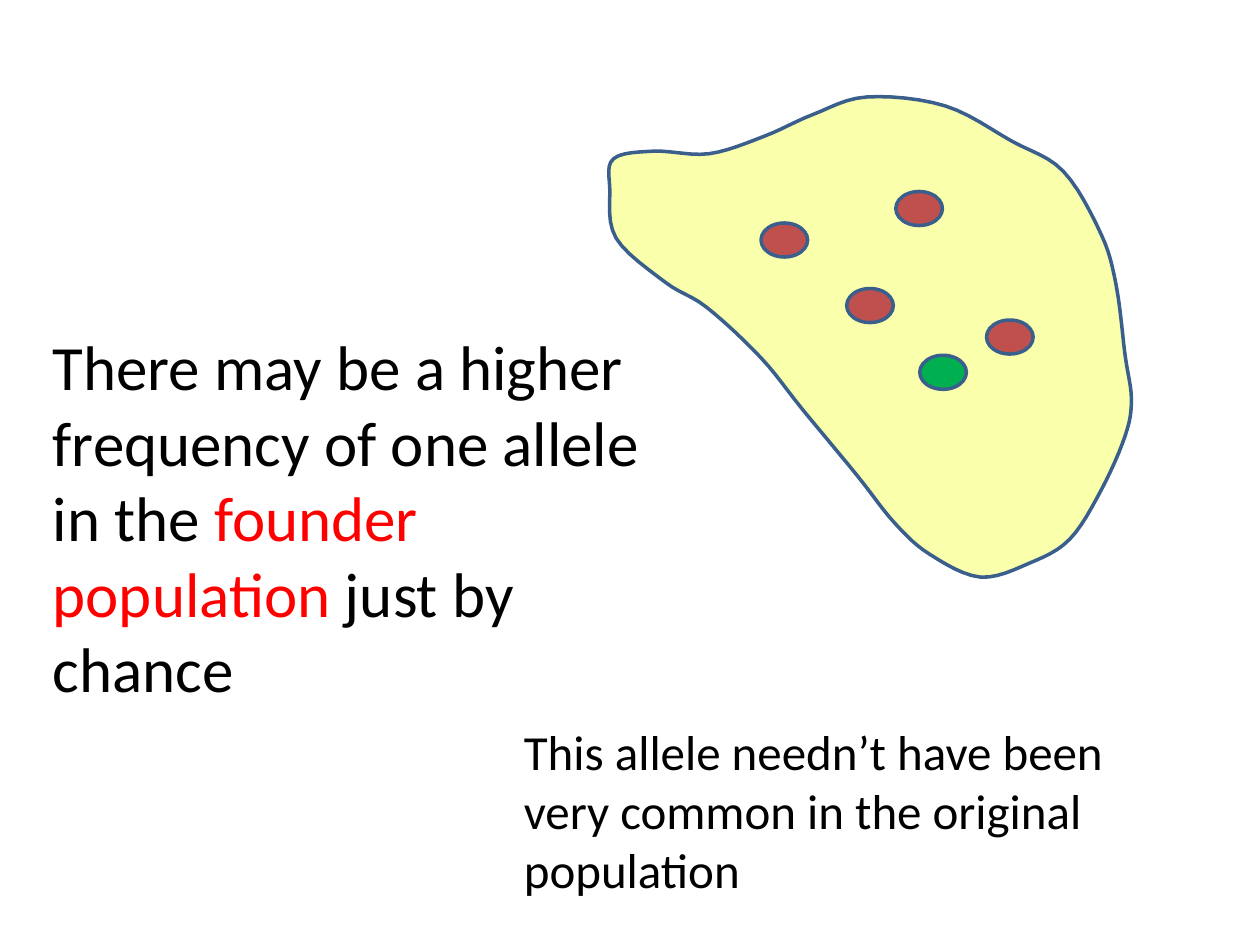
from pptx import Presentation
from pptx.dml.color import RGBColor
from pptx.enum.shapes import MSO_SHAPE
from pptx.enum.text import MSO_AUTO_SIZE
from pptx.util import Inches, Pt

OVAL = MSO_SHAPE.OVAL
FIT_SHAPE = MSO_AUTO_SIZE.SHAPE_TO_FIT_TEXT
BLACK, RED = "000000", "FF0000"
ISLAND_FILL, OUTLINE = "F9FFAB", "3A5F8C"
COMMON_ALLELE, RARE_ALLELE = "C0504D", "00B050"
FOUNDER_WIDTH, FOUNDER_HEIGHT = 0.37, 0.27
STEPS_PER_BEND = 6


def paint(shape, fill):
    shape.shadow.inherit = False
    shape.fill.solid()
    shape.fill.fore_color.rgb = RGBColor.from_string(fill)
    shape.line.color.rgb = RGBColor.from_string(OUTLINE)
    shape.line.width = Pt(2)


def add_text(page, left, top, width, height, size, pieces):
    box = page.shapes.add_textbox(Inches(left), Inches(top), Inches(width), Inches(height))
    box.text_frame.word_wrap = True
    box.text_frame.auto_size = FIT_SHAPE
    para = box.text_frame.paragraphs[0]
    for text, color in pieces:
        span = para.add_run()
        span.text = text
        span.font.name = "Calibri"
        span.font.size = Pt(size)
        span.font.color.rgb = RGBColor.from_string(color)


deck = Presentation()
deck.slide_width, deck.slide_height = Inches(10), Inches(7.5)
page = deck.slides.add_slide(deck.slide_layouts[6])

north_coast = [(5.19, 1.2), (5.63, 1.22), (6.07, 1.08), (6.45, 0.91), (6.88, 0.77), (7.5, 0.84)]
east_coast = [(8.03, 1.12), (8.44, 1.36), (8.74, 1.86), (8.86, 2.27), (8.93, 2.82), (8.98, 3.17)]
south_coast = [(8.93, 3.46), (8.74, 3.89), (8.49, 4.28), (8.17, 4.47), (7.78, 4.58), (7.38, 4.4)]
west_coast = [(7.1, 4.15), (6.8, 3.77), (6.37, 3.25), (6.04, 2.84), (5.61, 2.44), (5.28, 2.24)]
western_cape = [(4.89, 1.89), (4.84, 1.5), (4.87, 1.26)]
bends = north_coast + east_coast + south_coast + west_coast + western_cape

shoreline = []
for index, bend in enumerate(bends):
    before = bends[index - 1]
    after, beyond = (bends[(index + ahead) % len(bends)] for ahead in (1, 2))
    for step in range(STEPS_PER_BEND):
        t = step / STEPS_PER_BEND
        catmull_rom_weights = (
            (-t + 2 * t**2 - t**3) / 2,
            (2 - 5 * t**2 + 3 * t**3) / 2,
            (t + 4 * t**2 - 3 * t**3) / 2,
            (t**3 - t**2) / 2,
        )
        neighbours = (before, bend, after, beyond)
        shoreline.append(tuple(
            Inches(sum(weight * point[axis] for weight, point in zip(catmull_rom_weights, neighbours)))
            for axis in (0, 1)
        ))

builder = page.shapes.build_freeform(*shoreline[0])
builder.add_line_segments(shoreline[1:], close=True)
island = builder.convert_to_shape()
paint(island, ISLAND_FILL)

founders = [
    (6.04, 1.77, COMMON_ALLELE),
    (7.83, 2.54, COMMON_ALLELE),
    (7.11, 1.52, COMMON_ALLELE),
    (6.72, 2.29, COMMON_ALLELE),
    (7.3, 2.82, RARE_ALLELE),
]
for left, top, allele in founders:
    founder = page.shapes.add_shape(
        OVAL, Inches(left), Inches(top), Inches(FOUNDER_WIDTH), Inches(FOUNDER_HEIGHT)
    )
    paint(founder, allele)

add_text(page, 0.32, 2.55, 5, 3.13, 36, [
    ("There may be a higher frequency of one allele in the ", BLACK),
    ("founder population ", RED),
    ("just by chance", BLACK),
])
add_text(page, 4.06, 5.68, 4.93, 1.51, 28, [
    ("This allele needn’t have been very common in the original population", BLACK),
])

deck.save("out.pptx")
